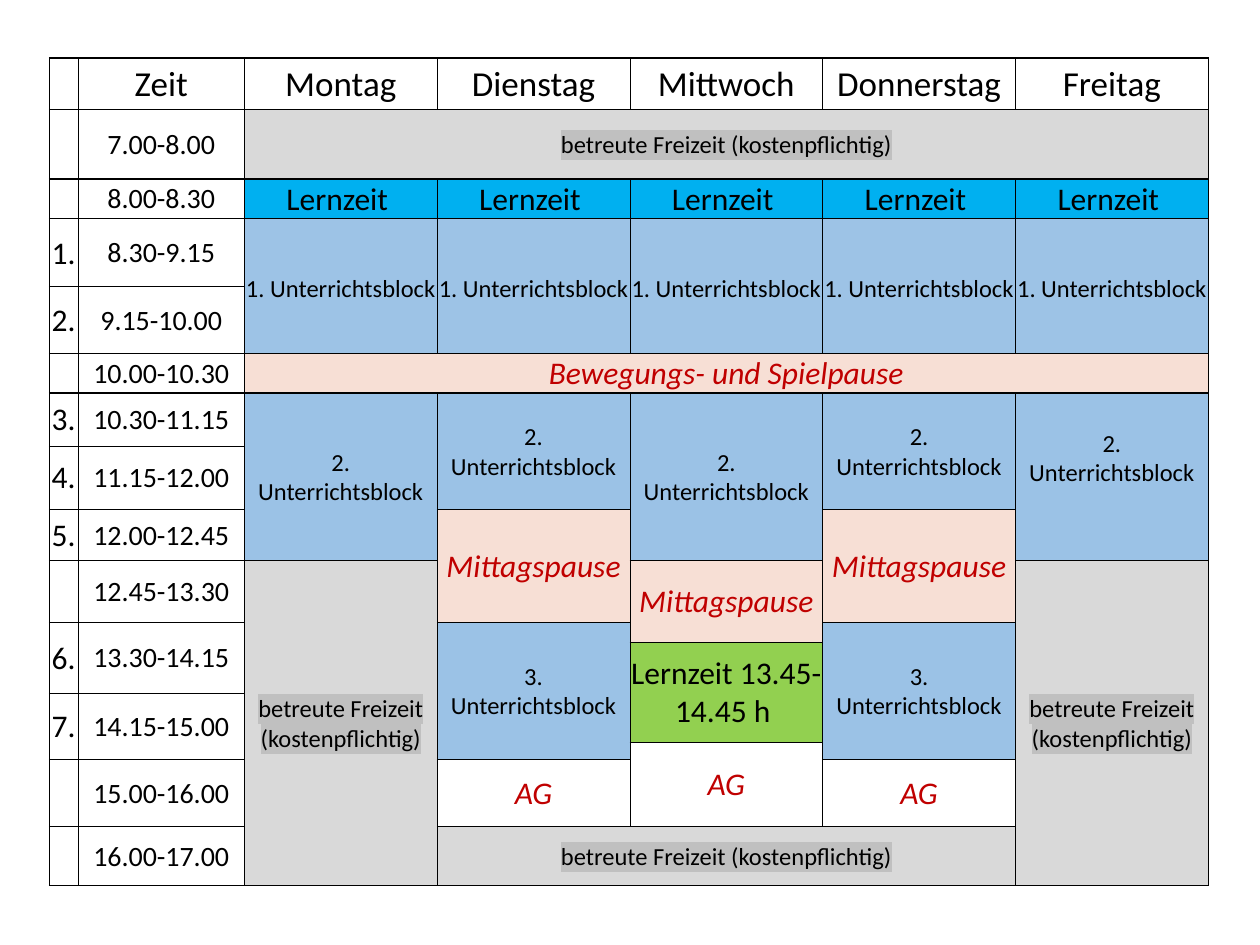
from dataclasses import dataclass

import pptx
import pptx.dml.color
import pptx.enum.text
import pptx.oxml.ns
import pptx.util
from lxml import etree

Inches = pptx.util.Inches
Pt = pptx.util.Pt
qn = pptx.oxml.ns.qn

COLUMNS = [0.23, 1.32] + [1.53] * 5
ROWS = [0.41, 0.55, 0.31, 0.54, 0.53, 0.31, 0.42, 0.5,
        0.41, 0.49, 0.16, 0.4, 0.39, 0.14, 0.53, 0.47]
THICK_LINES = {0, 1, 2, 5, 6}  # horizontal grid lines drawn at 1 pt
DAYS = ["Montag", "Dienstag", "Mittwoch", "Donnerstag", "Freitag"]


@dataclass(frozen=True)
class Look:
    size: int
    fill: str | None = None
    color: str = "000000"
    italic: bool = False
    highlight: str | None = None


@dataclass(frozen=True)
class Entry:
    row: int
    column: int
    look: Look
    lines: tuple[str, ...]
    rows: int = 1
    columns: int = 1
    bottom: float = 0
    thick: bool = False
    wide_space: bool = False


HEADER, TIME, PERIOD = Look(20), Look(16), Look(18)
CARE = Look(14, "D9D9D9", highlight="C0C0C0")
EARLY = Look(18, "00B0F0")
MORNING = Look(14, "9DC3E6")
LESSON = Look(14, "9BC2E6")
BREAK = Look(18, "F7DFD5", "C00000", True)
STUDY = Look(18, "92D050")
CLUB = Look(18, color="C00000", italic=True)

# Row, period, time, row span
TIMES = [
    (1, "", "7.00-8.00", 1), (2, "", "8.00-8.30", 1),
    (3, "1.", "8.30-9.15", 1), (4, "2.", "9.15-10.00", 1),
    (5, "", "10.00-10.30", 1), (6, "3.", "10.30-11.15", 1),
    (7, "4.", "11.15-12.00", 1), (8, "5.", "12.00-12.45", 1),
    (9, "", "12.45-13.30", 1), (10, "6.", "13.30-14.15", 2),
    (12, "7.", "14.15-15.00", 2), (14, "", "15.00-16.00", 1),
    (15, "", "16.00-17.00", 1),
]


def timetable() -> list[Entry]:
    care = "betreute Freizeit (kostenpflichtig)"
    care_lines = ("betreute Freizeit", "(kostenpflichtig)")
    entries = [
        Entry(0, 0, PERIOD, ("",)),
        Entry(0, 1, HEADER, ("Zeit",)),
        Entry(1, 2, CARE, (care,), columns=5),
        Entry(5, 2, BREAK, ("Bewegungs- und Spielpause",), columns=5),
        Entry(15, 3, CARE, (care,), columns=3),
    ]
    for row, period, time, span in TIMES:
        entries += [Entry(row, 0, PERIOD, (period,), span),
                    Entry(row, 1, TIME, (time,), span)]
    for column, day in enumerate(DAYS, 2):
        entries += [
            Entry(0, column, HEADER, (day,)),
            Entry(2, column, EARLY, ("Lernzeit ",)),
            Entry(3, column, MORNING, ("1. Unterrichtsblock",), 2, wide_space=True),
            Entry(6, column, LESSON, ("2.", "Unterrichtsblock"),
                  2 if column in (3, 5) else 3, bottom=0.3 if column == 6 else 0),
        ]
    # Long days
    for column in (3, 5):
        entries += [
            Entry(8, column, BREAK, ("Mittagspause",), 2),
            Entry(10, column, LESSON, ("3.", "Unterrichtsblock"), 4),
            Entry(14, column, CLUB, ("AG",)),
        ]
    # Short days
    for column in (2, 6):
        entries.append(Entry(9, column, CARE, care_lines, 7, thick=column == 6))
    # Wednesday
    entries += [
        Entry(9, 4, BREAK, ("Mittagspause",), 2),
        Entry(11, 4, STUDY, ("Lernzeit 13.45-14.45 h ",), 2),
        Entry(13, 4, CLUB, ("AG",), 2),
    ]
    return entries


def rgb(value: str) -> pptx.dml.color.RGBColor:
    return pptx.dml.color.RGBColor.from_string(value)


def add_solid(parent, tag: str, value: str):
    holder = etree.SubElement(parent, qn(tag))
    etree.SubElement(holder, qn("a:srgbClr"), val=value)
    return holder


def draw_borders(cell, entry: Entry) -> None:
    properties = cell._tc.get_or_add_tcPr()
    top = entry.thick or entry.row in THICK_LINES
    bottom = entry.thick or entry.row + entry.rows in THICK_LINES
    for side, thick in (("L", False), ("R", False), ("T", top), ("B", bottom)):
        line = etree.SubElement(properties, qn(f"a:ln{side}"),
                                w=str(Pt(1 if thick else 0.5)))
        add_solid(line, "a:solidFill", "000000")


def write_lines(cell, entry: Entry) -> None:
    look = entry.look
    frame = cell.text_frame
    for index, text in enumerate(entry.lines):
        para = frame.add_paragraph() if index else frame.paragraphs[0]
        para.alignment = pptx.enum.text.PP_ALIGN.CENTER
        font = para.font
        font.name, font.size, font.italic = "Calibri", Pt(look.size), look.italic
        font.color.rgb = rgb(look.color)
        if not text:
            continue
        span = para.add_run()
        span.text = text
        if look.highlight:
            add_solid(span.font._element, "a:highlight", look.highlight)
        if entry.wide_space:
            space = para.add_run()
            space.text = " "
            space.font.size = Pt(18)


def fill_entry(table, entry: Entry) -> None:
    cell = table.cell(entry.row, entry.column)
    if entry.rows > 1 or entry.columns > 1:
        cell.merge(table.cell(entry.row + entry.rows - 1,
                              entry.column + entry.columns - 1))
    cell.margin_left = cell.margin_right = cell.margin_top = Inches(0.01)
    cell.margin_bottom = Inches(entry.bottom)
    cell.vertical_anchor = pptx.enum.text.MSO_ANCHOR.MIDDLE
    draw_borders(cell, entry)
    if entry.look.fill:
        cell.fill.solid()
        cell.fill.fore_color.rgb = rgb(entry.look.fill)
    else:
        cell.fill.background()
    write_lines(cell, entry)


def main() -> None:
    deck = pptx.Presentation()
    deck.slide_width, deck.slide_height = Inches(10), Inches(7.5)
    page = deck.slides.add_slide(deck.slide_layouts[6])

    # Grid
    table = page.shapes.add_table(
        len(ROWS), len(COLUMNS), Inches(0.39), Inches(0.46),
        Inches(sum(COLUMNS)), Inches(sum(ROWS))).table
    table.first_row = table.horz_banding = False
    for column, width in zip(table.columns, COLUMNS):
        column.width = Inches(width)
    for row, height in zip(table.rows, ROWS):
        row.height = Inches(height)

    # Timetable entries
    for entry in timetable():
        fill_entry(table, entry)
    deck.save("out.pptx")


if __name__ == "__main__":
    main()
